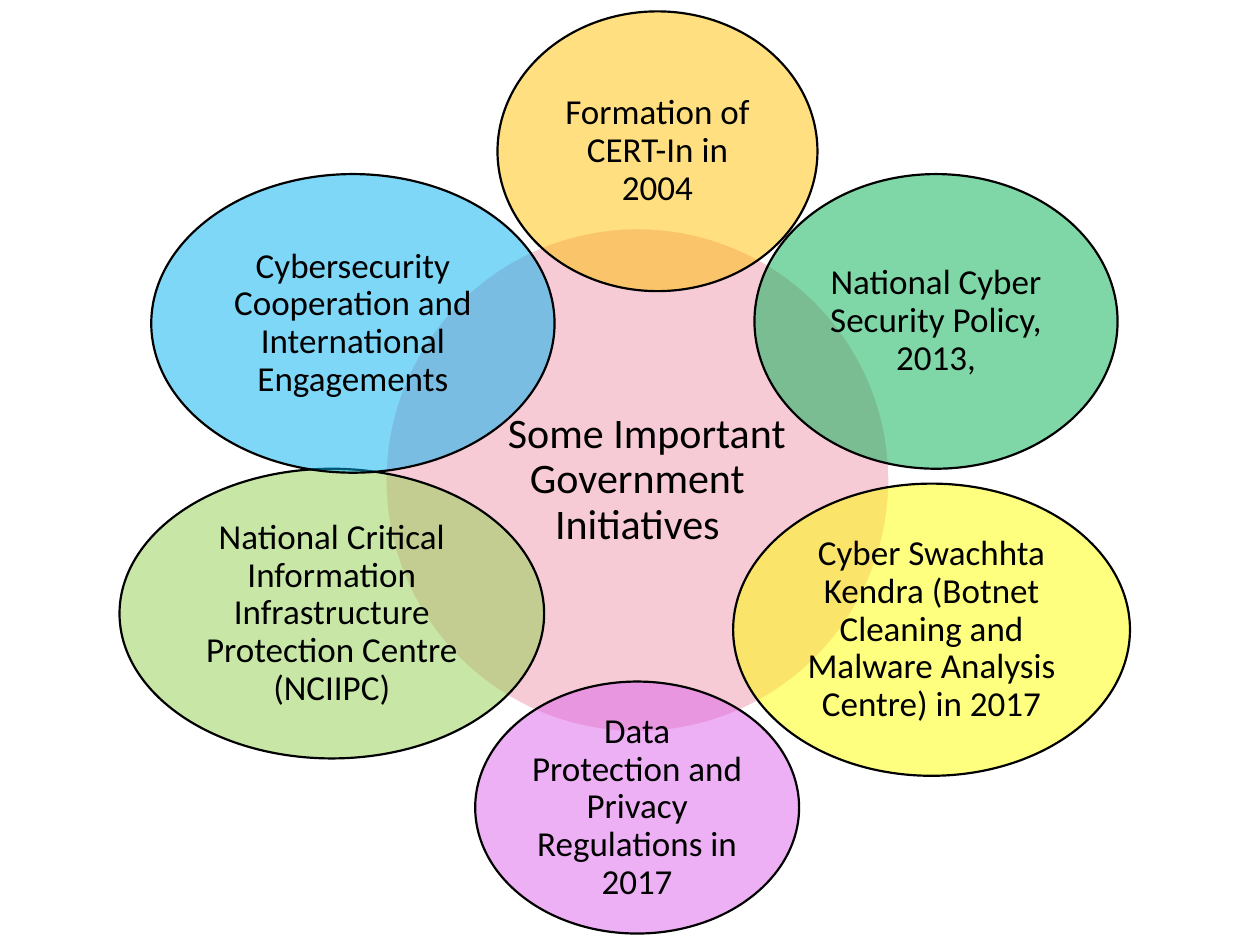
import pptx
import pptx.util
import pptx.dml.color
import pptx.enum.shapes
import pptx.enum.text
import pptx.oxml.ns
from lxml import etree

Cm, Pt = pptx.util.Cm, pptx.util.Pt
RGB = pptx.dml.color.RGBColor

BLACK = RGB(0x00, 0x00, 0x00)
WHITE = RGB(0xFF, 0xFF, 0xFF)
PINK = RGB(0xEE, 0x99, 0xAD)
GOLD = RGB(0xFF, 0xC0, 0x00)
GREEN = RGB(0x00, 0xB0, 0x50)
YELLOW = RGB(0xFF, 0xFF, 0x00)
VIOLET = RGB(0xDD, 0x63, 0xEB)
LIME = RGB(0x92, 0xD0, 0x50)
BLUE = RGB(0x00, 0xB0, 0xF0)

# Petals clockwise from the top: left, top, width, height in cm, fill, text
PETALS = [
    (10.03, 0.23, 6.45, 5.64, GOLD, "Formation of CERT-In in 2004"),
    (15.21, 3.51, 7.32, 5.94, GREEN, "National Cyber Security Policy, 2013,"),
    (14.78, 9.75, 8, 5.89, YELLOW,
     "Cyber Swachhta Kendra (Botnet Cleaning and Malware Analysis Centre) in 2017"),
    (9.58, 13.74, 6.53, 5.08, VIOLET,
     "Data Protection and Privacy Regulations in 2017"),
    (2.41, 9.45, 8.56, 5.84, LIME,
     "National Critical Information Infrastructure Protection Centre (NCIIPC)"),
    (3.05, 3.51, 8.13, 6.02, BLUE,
     "Cybersecurity Cooperation and International Engagements"),
]


def fade(shape, share):
    """Set the opacity of a solid fill, in percent."""
    qn = pptx.oxml.ns.qn
    color = shape.element.spPr.find(qn("a:solidFill")).find(qn("a:srgbClr"))
    etree.SubElement(color, qn("a:alpha"), val=str(share * 1000))


def add_oval(slide, left, top, width, height, fill, text, line=BLACK, size=20):
    """Add a half-clear oval with centred text."""
    oval = slide.shapes.add_shape(
        pptx.enum.shapes.MSO_SHAPE.OVAL,
        Cm(left), Cm(top), Cm(width), Cm(height))
    oval.shadow.inherit = False
    oval.fill.solid()
    oval.fill.fore_color.rgb = fill
    fade(oval, 50)
    oval.line.color.rgb = line
    oval.line.width = Pt(1.25)

    frame = oval.text_frame
    frame.text = text
    frame.word_wrap = True
    frame.vertical_anchor = pptx.enum.text.MSO_ANCHOR.MIDDLE
    frame.margin_left = frame.margin_right = Cm(0.08)
    frame.margin_top = frame.margin_bottom = Cm(0.08)
    para = frame.paragraphs[0]
    para.alignment = pptx.enum.text.PP_ALIGN.CENTER
    para.line_spacing = 0.9
    font = para.runs[0].font
    font.name = "Calibri"
    font.size = Pt(size)
    font.color.rgb = BLACK
    return oval


def indent(shape, width):
    """Indent the first line of the text."""
    para = shape.text_frame.paragraphs[0]
    para._p.get_or_add_pPr().set("indent", str(Cm(width)))


def main():
    deck = pptx.Presentation()
    deck.slide_width, deck.slide_height = Cm(25.4), Cm(19.05)
    slide = deck.slides.add_slide(deck.slide_layouts[6])

    # Hub
    hub = add_oval(slide, 7.77, 4.6, 10.16, 10.16, PINK,
                   "Some Important Government Initiatives", WHITE, 24)
    indent(hub, 0.38)

    # Petals
    for petal in PETALS:
        add_oval(slide, *petal)

    deck.save("out.pptx")


if __name__ == "__main__":
    main()
